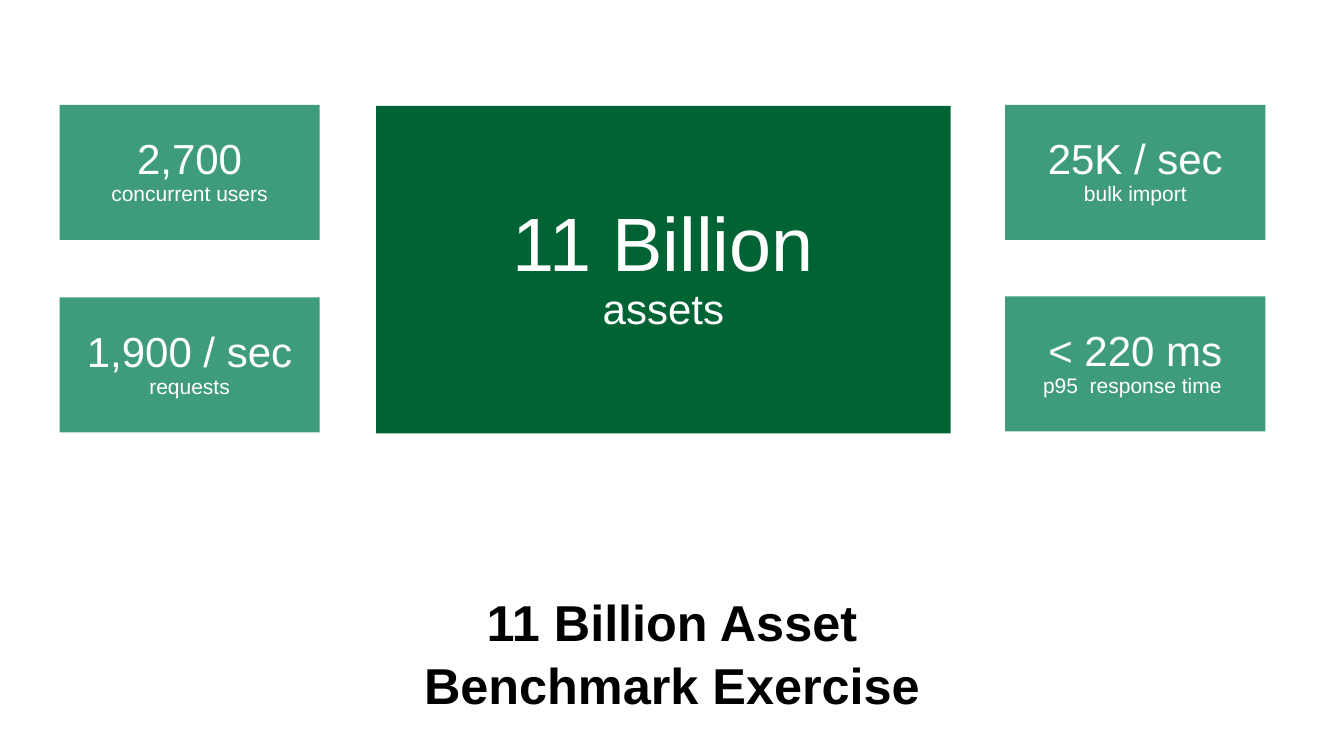
from pptx import Presentation
from pptx.dml.color import RGBColor
from pptx.enum.shapes import MSO_SHAPE
from pptx.enum.text import MSO_ANCHOR, PP_ALIGN
from pptx.util import Inches, Pt

WHITE, BLACK = "FFFFFF", "000000"
DARK_GREEN, LIGHT_GREEN = "006334", "3F9C7A"
CARD_WIDTH, CARD_HEIGHT = 2.58, 1.34


def rgb(value):
    return RGBColor.from_string(value)


def write(para, text, size, color=WHITE, bold=False, spacing=0.9):
    para.text = text
    para.alignment = PP_ALIGN.CENTER
    para.line_spacing = spacing
    for span in para.runs:
        span.font.name = "Arial"
        span.font.size = Pt(size)
        span.font.bold = bold
        span.font.color.rgb = rgb(color)


def add_card(page, box, value, label, fill, value_size=30, label_size=15):
    card = page.shapes.add_shape(MSO_SHAPE.RECTANGLE, *map(Inches, box))
    card.shadow.inherit = False
    card.fill.solid()
    card.fill.fore_color.rgb = rgb(fill)
    card.line.fill.background()
    frame = card.text_frame
    frame.word_wrap = True
    frame.vertical_anchor = MSO_ANCHOR.MIDDLE
    write(frame.paragraphs[0], value, value_size)
    write(frame.add_paragraph(), label, label_size)


def add_card_column(page, left, tops, metrics):
    for top, (value, label) in zip(tops, metrics):
        box = (left, top, CARD_WIDTH, CARD_HEIGHT)
        add_card(page, box, value, label, LIGHT_GREEN)


def add_title(page, box, text):
    frame = page.shapes.add_textbox(*map(Inches, box)).text_frame
    frame.word_wrap = True
    frame.vertical_anchor = MSO_ANCHOR.MIDDLE
    frame.margin_bottom = 0
    write(frame.paragraphs[0], text, 36, color=BLACK, bold=True, spacing=1.05)


def main():
    deck = Presentation()
    deck.slide_width, deck.slide_height = Inches(13.33), Inches(7.5)
    page = deck.slides.add_slide(deck.slide_layouts[6])
    add_title(page, (0.59, 5.78, 12.15, 1.31), "11 Billion Asset\vBenchmark Exercise")
    add_card(page, (3.73, 1.05, 5.7, 3.25), "11 Billion", "assets", DARK_GREEN,
             value_size=54, label_size=30)
    add_card_column(page, 0.59, (1.04, 2.95),
                    [("2,700", "concurrent users"), ("1,900 / sec", "requests")])
    add_card_column(page, 9.97, (1.04, 2.94),
                    [("25K / sec", "bulk import"), ("< 220 ms", "p95  response time ")])
    deck.save("out.pptx")


if __name__ == "__main__":
    main()
